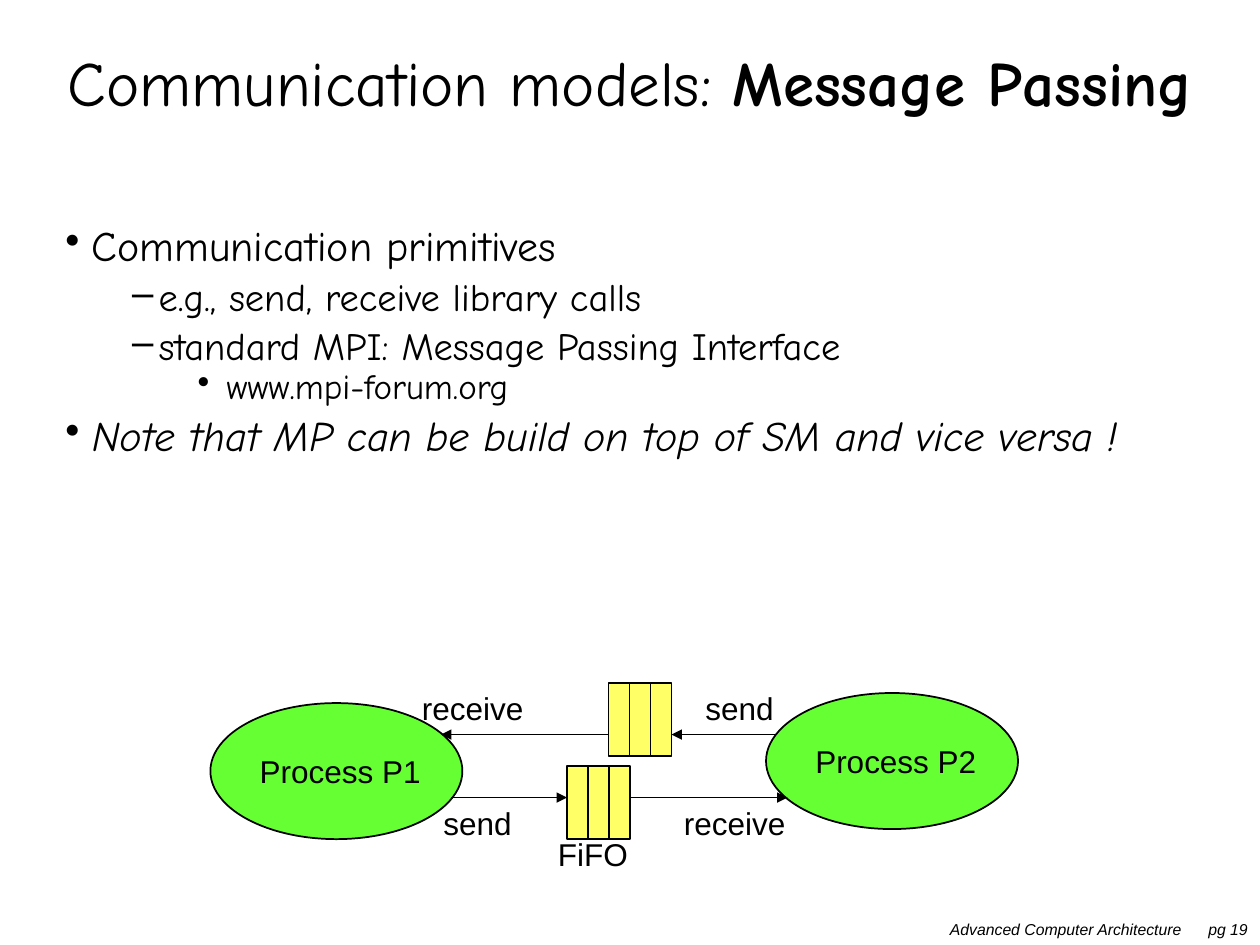
from lxml import etree
from pptx import Presentation
from pptx.dml.color import RGBColor
from pptx.enum.shapes import MSO_CONNECTOR, MSO_SHAPE
from pptx.enum.text import MSO_ANCHOR, PP_ALIGN
from pptx.oxml.ns import qn
from pptx.util import Inches, Pt

LEFT, CENTER = PP_ALIGN.LEFT, PP_ALIGN.CENTER
TOP, MIDDLE = MSO_ANCHOR.TOP, MSO_ANCHOR.MIDDLE
ELLIPSE, RECT = MSO_SHAPE.OVAL, MSO_SHAPE.RECTANGLE
STRAIGHT = MSO_CONNECTOR.STRAIGHT
HEAD_FONT, LABEL_FONT = "Comic Neue", "Arial"
BLACK, GREEN, YELLOW = "000000", "66FF33", "FFFF66"

# Content: (text, bold)
TITLE = [("Communication models: ", False), ("Message Passing", True)]
# (level, text, italic)
BULLETS = [
    (0, "Communication primitives", False),
    (1, "e.g., send, receive library calls", False),
    (1, "standard MPI: Message Passing Interface", False),
    (2, "www.mpi-forum.org", False),
    (0, "Note that MP can be build on top of SM and vice versa !", True),
]
# per level: bullet, size, margin, hanging indent, space before
LEVELS = [("•", 24, 0.21, 0.21, 4.8), ("–", 22, 0.74, 0.21, 4.4),
          ("•", 20, 1.28, 0.23, 0)]
FOOTER = "Advanced Computer Architecture\tpg 19"
FOOTER_TAB = 2.05

# Diagram: left, top
PROCESSES = [("Process P1", 1.67, 5.58), ("Process P2", 6.08, 5.5)]
FIFOS = [(4.5, 6.08), (4.83, 5.42)]
CELLS, CELL_W, CELL_H = 3, 1 / 6, 0.58
# from x, to x, y
ARROWS = [(3.58, 4.5, 6.33), (6.17, 5.33, 5.83),
          (4.83, 3.5, 5.83), (5, 6.25, 6.33)]
# text, left, top, width
LABELS = [("receive", 5.33, 6.33, 1.01), ("receive", 3.25, 5.42, 1.01),
          ("send", 5.5, 5.42, 0.74), ("send", 3.42, 6.33, 0.74),
          ("FiFO", 4.33, 6.58, 0.76)]


def rgb(value):
    return RGBColor.from_string(value)


def add_run(p, text, size, font, bold=False, italic=False):
    r = p.add_run()
    r.text = text
    r.font.size, r.font.name = Pt(size), font
    r.font.bold, r.font.italic = bold, italic
    r.font.color.rgb = rgb(BLACK)


def add_text(s, x, y, w, h, wrap=True, anchor=TOP):
    tf = s.shapes.add_textbox(Inches(x), Inches(y), Inches(w), Inches(h)).text_frame
    tf.word_wrap, tf.vertical_anchor = wrap, anchor
    return tf


def add_box(s, kind, x, y, w, h, fill):
    sp = s.shapes.add_shape(kind, Inches(x), Inches(y), Inches(w), Inches(h))
    sp.shadow.inherit = False
    sp.fill.solid()
    sp.fill.fore_color.rgb = rgb(fill)
    sp.line.color.rgb, sp.line.width = rgb(BLACK), Pt(1)
    return sp


def add_arrow(s, x1, x2, y):
    line = s.shapes.add_connector(STRAIGHT, Inches(x1), Inches(y), Inches(x2), Inches(y))
    line.line.color.rgb, line.line.width = rgb(BLACK), Pt(1)
    spPr = line._element.spPr
    etree.SubElement(spPr.get_or_add_ln(), qn("a:tailEnd"), type="triangle")
    etree.SubElement(spPr, qn("a:effectLst"))


def set_bullet(p, char, margin, hanging):
    pPr = p._p.get_or_add_pPr()
    pPr.set("marL", str(Inches(margin)))
    pPr.set("indent", str(-Inches(hanging)))
    etree.SubElement(pPr, qn("a:buChar"), char=char)


prs = Presentation()
prs.slide_width, prs.slide_height = Inches(10), Inches(7.5)
s = prs.slides.add_slide(prs.slide_layouts[6])

# Footer with the page number on a tab stop
tf = add_text(s, 7.13, 7.25, 2.87, 0.25)
tf.margin_left, tf.margin_right = Inches(0.41), 0
p = tf.paragraphs[0]
p.alignment = LEFT
tabs = etree.SubElement(p._p.get_or_add_pPr(), qn("a:tabLst"))
etree.SubElement(tabs, qn("a:tab"), pos=str(Inches(FOOTER_TAB)), algn="l")
add_run(p, FOOTER, 9, LABEL_FONT, italic=True)

# Title
p = add_text(s, 0, 0.33, 10, 0.75, anchor=MIDDLE).paragraphs[0]
p.alignment, p.line_spacing = CENTER, 0.8
for text, bold in TITLE:
    add_run(p, text, 36, HEAD_FONT, bold=bold)

# Bullet list
tf = add_text(s, 0.42, 1.74, 9.08, 3.42)
for i, (level, text, italic) in enumerate(BULLETS):
    char, size, margin, hanging, before = LEVELS[level]
    p = tf.add_paragraph() if i else tf.paragraphs[0]
    p.level, p.line_spacing, p.space_before = level, 0.9, Pt(before)
    set_bullet(p, char, margin, hanging)
    add_run(p, text, size, HEAD_FONT, italic=italic)

# Processes
for text, x, y in PROCESSES:
    tf = add_box(s, ELLIPSE, x, y, 2, 1.08, GREEN).text_frame
    tf.word_wrap, tf.vertical_anchor = False, MIDDLE
    p = tf.paragraphs[0]
    p.alignment = LEFT
    add_run(p, text, 18, LABEL_FONT)

# FIFO buffers
for x, y in FIFOS:
    for i in range(CELLS):
        add_box(s, RECT, x + i * CELL_W, y, CELL_W, CELL_H, YELLOW)

# Messages and their labels
for x1, x2, y in ARROWS:
    add_arrow(s, x1, x2, y)
for text, x, y, w in LABELS:
    p = add_text(s, x, y, w, 0.4, wrap=False).paragraphs[0]
    add_run(p, text, 18, LABEL_FONT)

prs.save("out.pptx")
